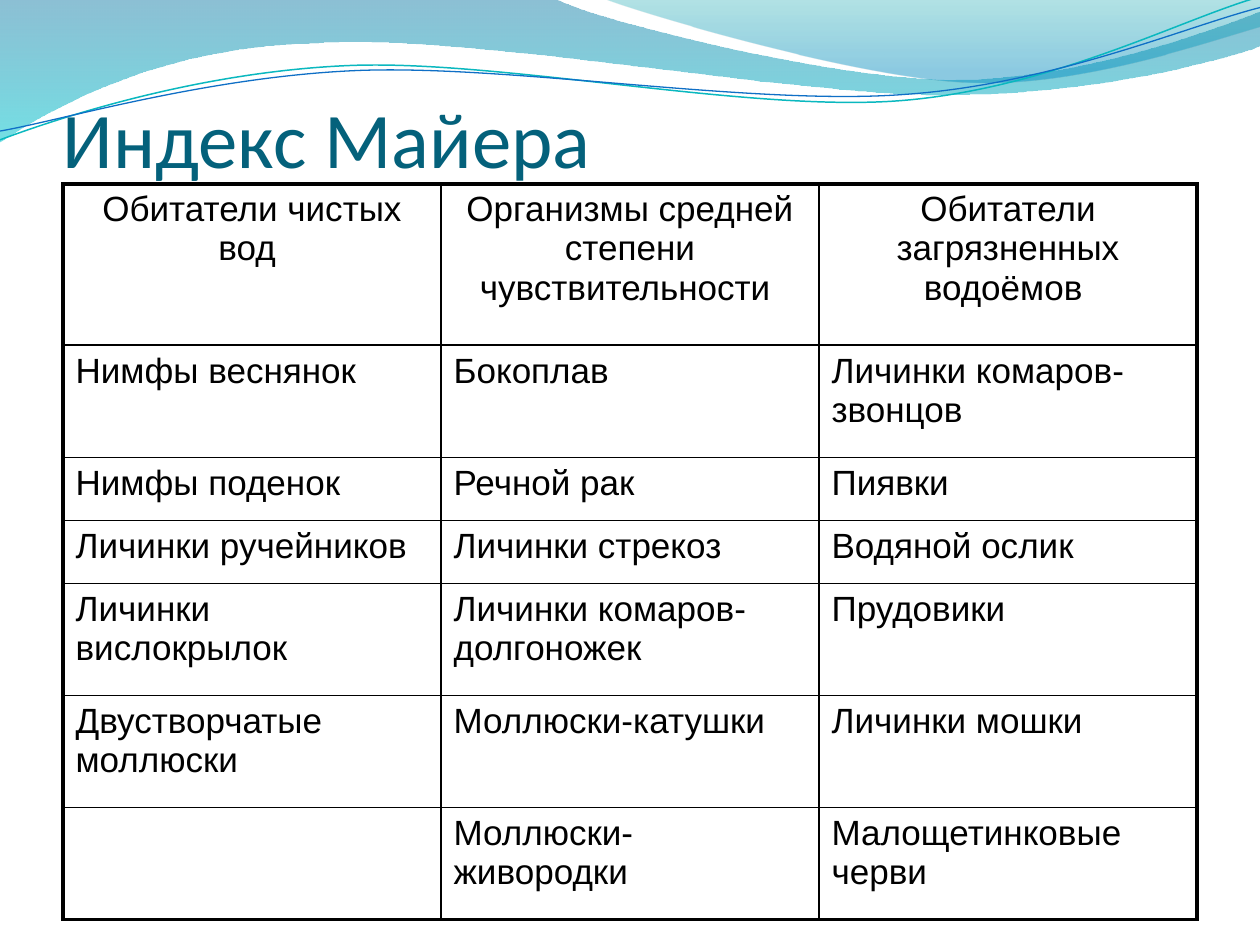
from math import cos, radians, sin

from lxml.etree import SubElement
from pptx import Presentation
from pptx.dml.color import RGBColor
from pptx.enum.text import MSO_ANCHOR, PP_ALIGN
from pptx.oxml.ns import qn
from pptx.util import Pt

PX = 9144
BLACK = RGBColor(0x00, 0x00, 0x00)
TITLE_TEAL = RGBColor(0x04, 0x61, 0x7B)
DEEP_BLUE = RGBColor(0x00, 0x74, 0xA1)
AQUA = RGBColor(0x00, 0xC6, 0xCF)
SEA_GREEN = RGBColor(0x00, 0xA1, 0xA9)
SKY_BLUE = RGBColor(0x00, 0x8B, 0xBF)
LINE_TEAL = RGBColor(0x0A, 0xB8, 0xBF)
LINE_BLUE = RGBColor(0x0F, 0x6F, 0xC6)

LEFT_WAVE = [
    (0, 0), (440, -1),
    (476, 17, 664, 63, 758, 63), (853, 63, 958, 26, 1000, 9),
    (1001, 36),
    (983, 44, 870, 76, 746, 75), (622, 75, 382, 28, 257, 34),
    (129, 36, 46, 83, -1, 113),
    (0, 0),
]
RIGHT_WAVE = [
    (479, -1),
    (509, 11, 682, 62, 769, 65), (856, 69, 961, 32, 1000, 21),
    (1000, 0), (479, -1),
]
TEAL_STRAND = [
    (0, 111),
    (48, 93, 158, 57, 277, 52), (395, 47, 593, 89, 713, 80),
    (833, 71, 938, 15, 998, -2),
]
BLUE_STRAND = [
    (0, 104),
    (47, 96, 164, 61, 283, 56), (403, 51, 597, 84, 717, 75),
    (836, 67, 941, 21, 1000, 6),
]
STRAND_TILT = -2.7
STRAND_CENTER = (499, 58)

COLUMN_WIDTH = 300
ROW_HEIGHTS = [128, 89, 50, 50, 89, 89, 89]
ORGANISMS = [
    ["Обитатели чистых вод ", "Организмы средней степени чувствительности ",
     "Обитатели загрязненных водоёмов "],
    ["Нимфы веснянок", "Бокоплав", "Личинки комаров-звонцов"],
    ["Нимфы поденок", "Речной рак", "Пиявки"],
    ["Личинки ручейников", "Личинки стрекоз", "Водяной ослик"],
    ["Личинки вислокрылок", "Личинки комаров-долгоножек", "Прудовики"],
    ["Двустворчатые моллюски", "Моллюски-катушки", "Личинки мошки"],
    ["", "Моллюски-живородки", "Малощетинковые черви"],
]


def px(*lengths):
    """Turn pixel lengths into EMU."""
    return [round(length * PX) for length in lengths]


def turn(point, degrees):
    """Turn a point clockwise about the centre of the strands."""
    center_x, center_y = STRAND_CENTER
    x, y = point[0] - center_x, point[1] - center_y
    angle = radians(degrees)
    return (center_x + x * cos(angle) - y * sin(angle),
            center_y + x * sin(angle) + y * cos(angle))


def add_outline(slide, segments, close, tilt=0):
    """Add a freeform of straight lines and cubic curves."""
    points = [turn(segment[i:i + 2], -tilt)
              for segment in segments for i in range(0, len(segment), 2)]
    builder = slide.shapes.build_freeform(*px(*points[0]))
    builder.add_line_segments([px(*point) for point in points[1:]], close=close)
    outline = builder.convert_to_shape()
    outline.shadow.inherit = False
    outline.rotation = tilt
    lines = iter(list(outline.element.iter(qn("a:lnTo"))))
    for segment in segments[1:]:
        first = next(lines)
        if len(segment) == 6:
            first.tag = qn("a:cubicBezTo")
            for line in (next(lines), next(lines)):
                first.append(line[0])
                line.getparent().remove(line)
    return outline


def add_wave(slide, segments, stops):
    """Add a wave with a translucent vertical gradient."""
    wave = add_outline(slide, segments, True)
    wave.line.fill.background()
    wave.fill.gradient()
    wave.fill.gradient_angle = 270
    for stop, (position, color, opacity) in zip(wave.fill.gradient_stops, stops):
        stop.position = position
        stop.color.rgb = color
    colors = wave.element.spPr.iter(qn("a:srgbClr"))
    for color_xml, (position, color, opacity) in zip(colors, stops):
        SubElement(color_xml, qn("a:alpha"), val=str(opacity * 1000))


def add_strand(slide, segments, color, width):
    """Add a thin unfilled tilted curve."""
    strand = add_outline(slide, segments, False, STRAND_TILT)
    strand.fill.background()
    strand.line.color.rgb = color
    strand.line.width = Pt(width)


def add_text(paragraph, text, font, size, color):
    """Add one formatted run to a paragraph."""
    run = paragraph.add_run()
    run.text = text
    run.font.name = font
    run.font.size = Pt(size)
    run.font.color.rgb = color


def add_title(slide, text):
    """Add the heading above the table."""
    frame = slide.shapes.add_textbox(*px(50, 76, 900, 70)).text_frame
    frame.word_wrap = True
    frame.vertical_anchor = MSO_ANCHOR.BOTTOM
    frame.margin_left = frame.margin_right = frame.margin_bottom = 0
    add_text(frame.paragraphs[0], text, "Calibri", 45, TITLE_TEAL)


def set_borders(cell, outer_sides):
    """Draw black cell borders, heavier on the outer sides."""
    properties = cell._tc.get_or_add_tcPr()
    for side in "LRTB":
        width = Pt(2.25 if side in outer_sides else 1)
        border = SubElement(properties, qn(f"a:ln{side}"), w=str(width))
        solid = SubElement(border, qn("a:solidFill"))
        SubElement(solid, qn("a:srgbClr"), val=str(BLACK))


def add_organism_table(slide, rows):
    """Add the table of indicator organisms."""
    column_count = len(rows[0])
    table = slide.shapes.add_table(
        len(rows), column_count,
        *px(50, 146, COLUMN_WIDTH * column_count, sum(ROW_HEIGHTS))).table
    table.first_row = table.horz_banding = False
    for column in table.columns:
        column.width = px(COLUMN_WIDTH)[0]
    for row, height in zip(table.rows, ROW_HEIGHTS):
        row.height = px(height)[0]
    for r, names in enumerate(rows):
        for c, name in enumerate(names):
            cell = table.cell(r, c)
            edges = {"L": c == 0, "R": c == column_count - 1,
                     "T": r == 0, "B": r == len(rows) - 1}
            set_borders(cell, [side for side in edges if edges[side]])
            cell.fill.background()
            paragraph = cell.text_frame.paragraphs[0]
            paragraph.alignment = PP_ALIGN.CENTER if r == 0 else PP_ALIGN.LEFT
            if name:
                add_text(paragraph, name, "Arial", 20, BLACK)


def main():
    """Build and save the slide."""
    presentation = Presentation()
    presentation.slide_width, presentation.slide_height = px(1000, 750)
    slide = presentation.slides.add_slide(presentation.slide_layouts[6])
    add_wave(slide, LEFT_WAVE, [(0, DEEP_BLUE, 45), (1, AQUA, 55)])
    add_wave(slide, RIGHT_WAVE, [(0, SEA_GREEN, 30), (0.8, SKY_BLUE, 45)])
    add_strand(slide, TEAL_STRAND, LINE_TEAL, 0.85)
    add_strand(slide, BLUE_STRAND, LINE_BLUE, 0.75)
    add_title(slide, "Индекс Майера")
    add_organism_table(slide, ORGANISMS)
    presentation.save("out.pptx")


if __name__ == "__main__":
    main()
